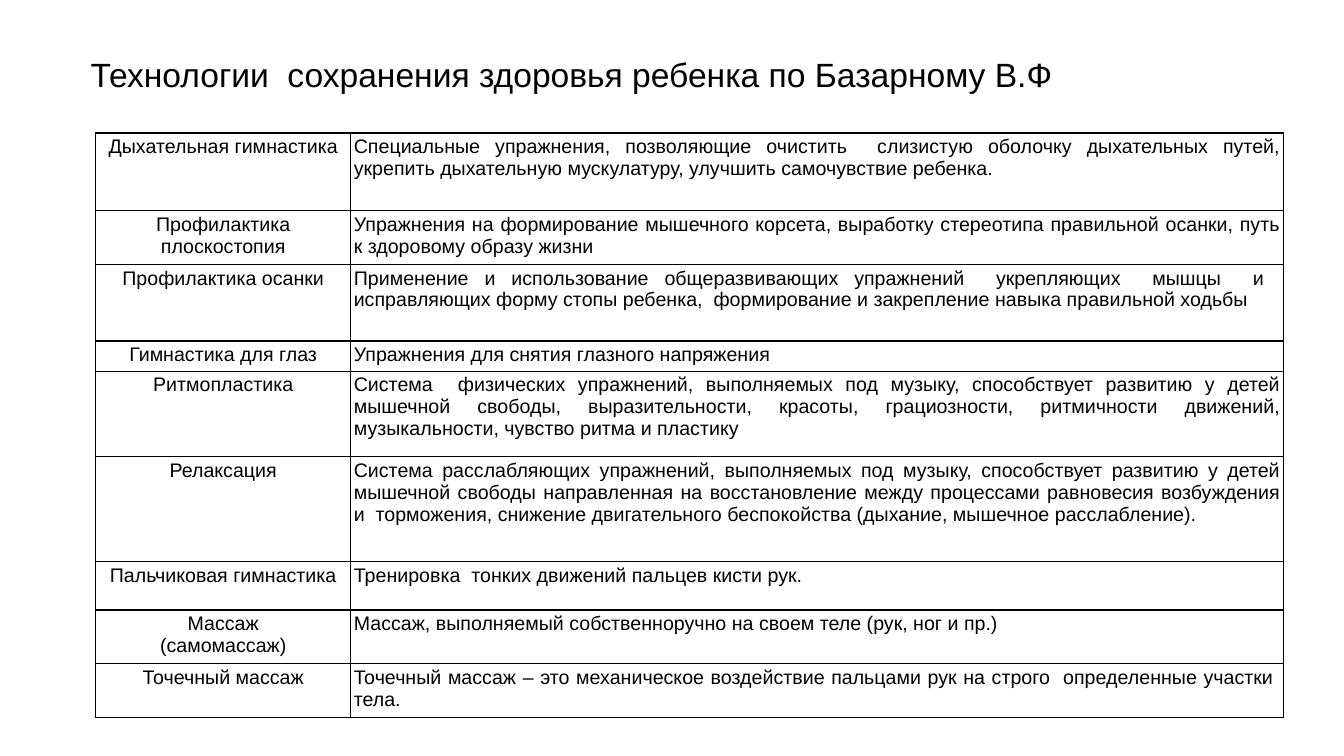
import dataclasses

import pptx
import pptx.dml.color
import pptx.enum.text
import pptx.oxml
import pptx.oxml.ns
import pptx.util

Pt = pptx.util.Pt
Align = pptx.enum.text.PP_ALIGN
Anchor = pptx.enum.text.MSO_ANCHOR


@dataclasses.dataclass(frozen=True)
class Theme:
    font: str = "Arial"
    ink: str = "000000"
    title_size: float = 24
    body_size: float = 14
    body_leading: float = 15.6
    cell_inset: float = 2.16
    border_width: float = 1


THEME = Theme()
TITLE = "Технологии  сохранения здоровья ребенка по Базарному В.Ф"
COLUMN_WIDTHS = (182.16, 666.4)
TECHNOLOGIES = (
    (55.44, "Дыхательная гимнастика",
     "Специальные упражнения, позволяющие очистить  слизистую оболочку дыхательных путей, "
     "укрепить дыхательную мускулатуру, улучшить самочувствие ребенка."),
    (38.4, "Профилактика плоскостопия",
     "Упражнения на формирование мышечного корсета, выработку стереотипа правильной осанки, "
     "путь к здоровому образу жизни"),
    (54.72, "Профилактика осанки",
     "Применение и использование общеразвивающих упражнений  укрепляющих  мышцы  и  "
     "исправляющих форму стопы ребенка,  формирование и закрепление навыка правильной ходьбы"),
    (21.6, "Гимнастика для глаз", "Упражнения для снятия глазного напряжения"),
    (61.2, "Ритмопластика",
     "Система  физических упражнений, выполняемых под музыку, способствует развитию у детей "
     "мышечной свободы, выразительности, красоты, грациозности, ритмичности движений, "
     "музыкальности, чувство ритма и пластику"),
    (74.88, "Релаксация",
     "Система расслабляющих упражнений, выполняемых под музыку, способствует развитию у детей "
     "мышечной свободы направленная на восстановление между процессами равновесия возбуждения "
     "и  торможения, снижение двигательного беспокойства (дыхание, мышечное расслабление)."),
    (34.56, "Пальчиковая гимнастика", "Тренировка  тонких движений пальцев кисти рук."),
    (38.4, "Массаж\n(самомассаж)",
     "Массаж, выполняемый собственноручно на своем теле (рук, ног и пр.)"),
    (38.4, "Точечный массаж",
     "Точечный массаж – это механическое воздействие пальцами рук на строго  "
     "определенные участки  тела."),
)


def write_text(frame, text, *, size, align, leading):
    frame.word_wrap = True
    for index, line in enumerate(text.split("\n")):
        para = frame.add_paragraph() if index else frame.paragraphs[0]
        para.alignment = align
        para.line_spacing = leading
        span = para.add_run()
        span.text = line
        span.font.name = THEME.font
        span.font.size = Pt(size)
        span.font.color.rgb = pptx.dml.color.RGBColor.from_string(THEME.ink)


def add_title(page, text, left, top, width, height):
    box = page.shapes.add_textbox(Pt(left), Pt(top), Pt(width), Pt(height))
    box.text_frame.vertical_anchor = Anchor.MIDDLE
    write_text(box.text_frame, text, size=THEME.title_size, align=Align.LEFT, leading=0.9)


def set_borders(cell):
    properties = cell._tc.get_or_add_tcPr()
    for position, side in enumerate(("lnL", "lnR", "lnT", "lnB")):
        border = pptx.oxml.parse_xml(
            f'<a:{side} {pptx.oxml.ns.nsdecls("a")} w="{Pt(THEME.border_width)}">'
            f'<a:solidFill><a:srgbClr val="{THEME.ink}"/></a:solidFill></a:{side}>')
        properties.insert(position, border)


def fill_cell(cell, text, align):
    cell.margin_left = cell.margin_right = Pt(THEME.cell_inset)
    cell.margin_top = cell.margin_bottom = Pt(THEME.cell_inset)
    cell.vertical_anchor = Anchor.TOP
    cell.fill.background()
    set_borders(cell)
    write_text(cell.text_frame, text, size=THEME.body_size, align=align,
               leading=Pt(THEME.body_leading))


def add_technology_table(page, left, top):
    height = sum(entry[0] for entry in TECHNOLOGIES)
    table = page.shapes.add_table(len(TECHNOLOGIES), len(COLUMN_WIDTHS), Pt(left), Pt(top),
                                  Pt(sum(COLUMN_WIDTHS)), Pt(height)).table
    table.first_row = False
    table.horz_banding = False
    for column, width in zip(table.columns, COLUMN_WIDTHS):
        column.width = Pt(width)
    for row, (row_height, name, description) in zip(table.rows, TECHNOLOGIES):
        row.height = Pt(row_height)
        fill_cell(row.cells[0], name, Align.CENTER)
        fill_cell(row.cells[1], description, Align.JUSTIFY)


def main():
    deck = pptx.Presentation()
    deck.slide_width = Pt(960)
    deck.slide_height = Pt(540)
    page = deck.slides.add_slide(deck.slide_layouts[6])
    add_title(page, TITLE, 57.6, 27.36, 837.36, 55.44)
    add_technology_table(page, 68.4, 95.04)
    deck.save("out.pptx")


if __name__ == "__main__":
    main()
